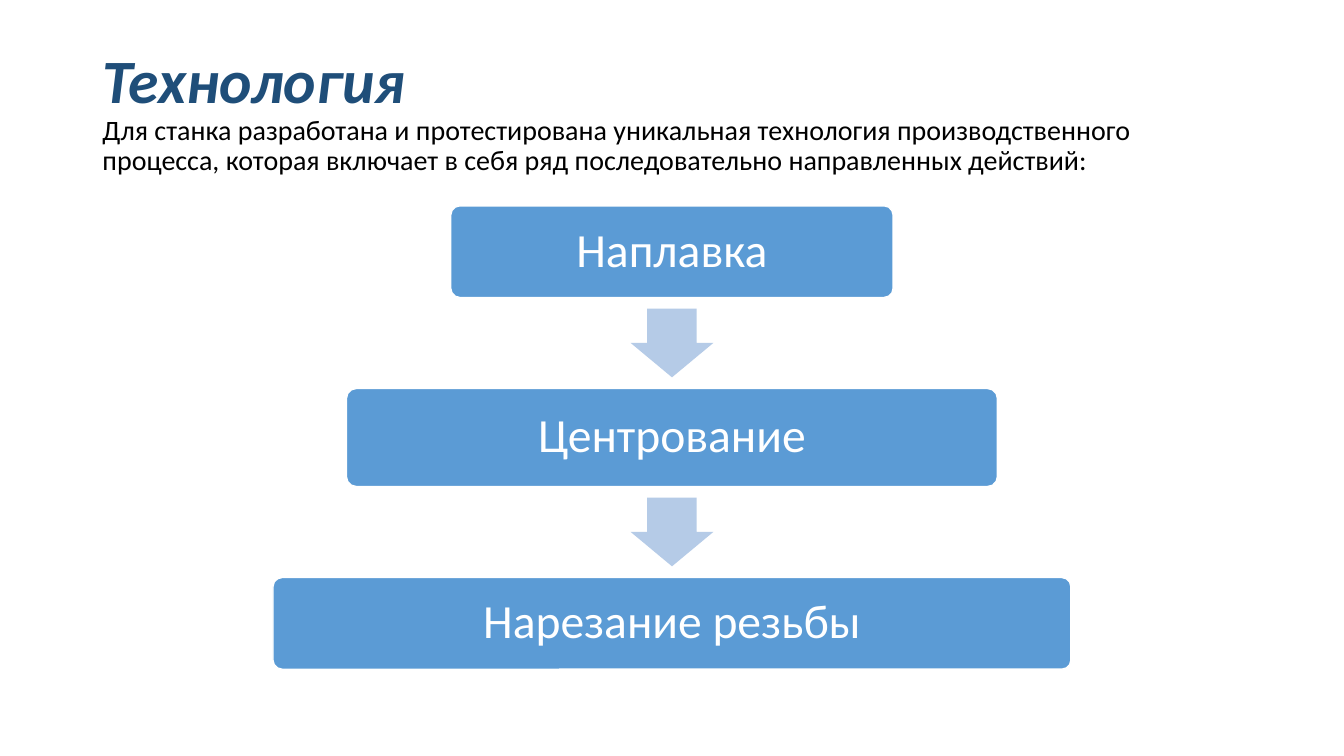
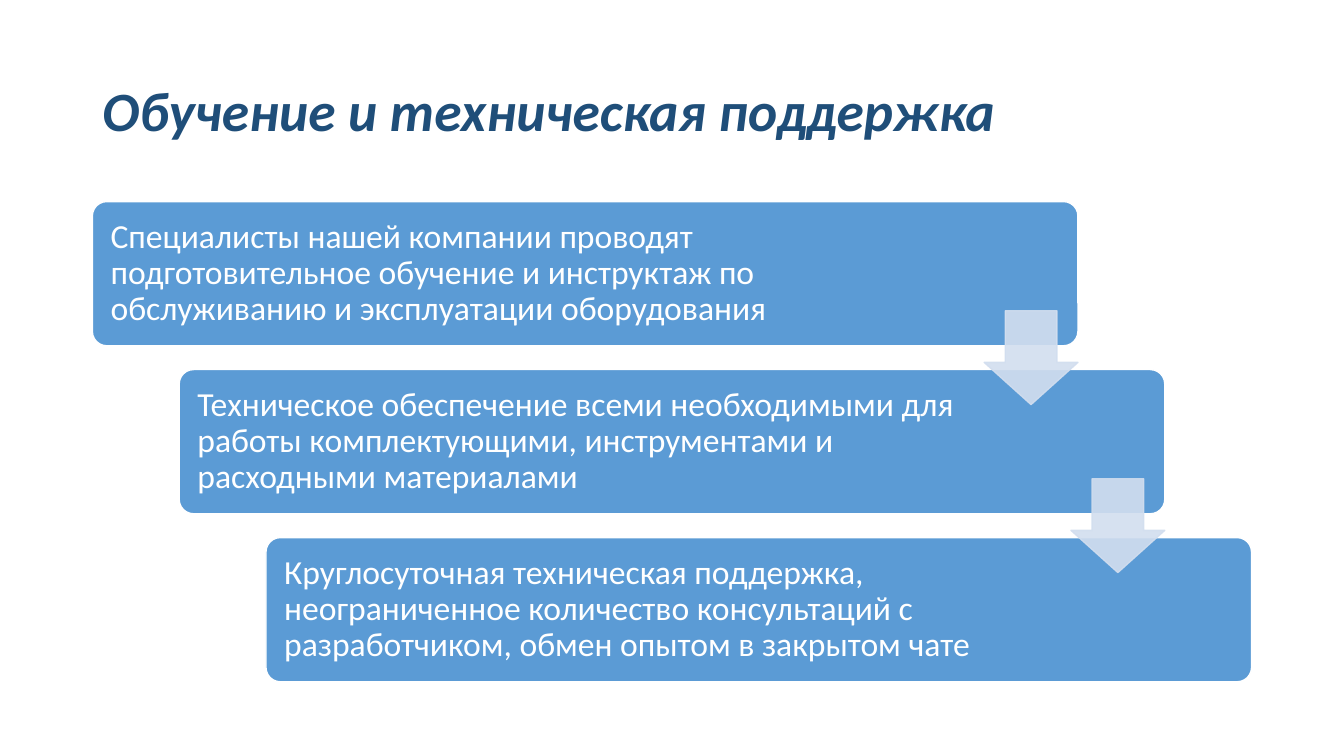
import pptx
import pptx.dml.color
import pptx.enum.shapes
import pptx.enum.text
import pptx.oxml
import pptx.oxml.ns
import pptx.util

Pt = pptx.util.Pt
Kind = pptx.enum.shapes.MSO_SHAPE
Align = pptx.enum.text.PP_ALIGN
Anchor = pptx.enum.text.MSO_ANCHOR

FONT = "Calibri"
HUES = {
    "title": "1F4E79",
    "text": "000000",
    "box": "5B9BD5",
    "white": "FFFFFF",
    "arrow": "B5CBE7",
    "pale": "D2DEEF",
}
WIDE, HIGH = 960, 540


class Deck:
    """Holds the shared style and the current slide."""

    def __init__(self):
        self.file = pptx.Presentation()
        self.file.slide_width, self.file.slide_height = Pt(WIDE), Pt(HIGH)
        self.slide = None

    def hue(self, name):
        return pptx.dml.color.RGBColor.from_string(HUES[name])

    def style(self, para, size, hue, strong=False, align=Align.LEFT):
        para.alignment = align
        para.line_spacing = 0.9
        para.space_before = para.space_after = Pt(0)
        for run in para.runs:
            font = run.font
            font.name, font.size = FONT, Pt(size)
            font.bold = font.italic = strong
            font.color.rgb = self.hue(hue)

    def page(self, title, size, lead=None):
        """Start a slide with a title and, if given, a lead line below it."""
        self.slide = self.file.slides.add_slide(self.file.slide_layouts[5])
        head = self.slide.shapes.title
        head.left, head.top, head.width, head.height = Pt(66), Pt(29), Pt(828), Pt(104)
        frame = head.text_frame
        frame.text = title
        frame.word_wrap = True
        frame.auto_size = pptx.enum.text.MSO_AUTO_SIZE.NONE
        frame.vertical_anchor = Anchor.MIDDLE
        self.style(frame.paragraphs[0], size, "title", strong=True)
        if lead:
            para = frame.add_paragraph()
            para.text = lead
            self.style(para, 20, "text")

    def shape(self, kind, x, y, w, h, fill, line, sides):
        item = self.slide.shapes.add_shape(kind, Pt(x), Pt(y), Pt(w), Pt(h))
        item.shadow.inherit = False
        item.fill.solid()
        item.fill.fore_color.rgb = self.hue(fill)
        if line:
            item.line.color.rgb = self.hue(line)
            item.line.width = Pt(1)
        else:
            item.line.fill.background()
        for spot, ratio in enumerate(sides):
            item.adjustments[spot] = ratio
        return item

    def box(self, x, y, w, h, text, size, align=Align.LEFT, right=10):
        item = self.shape(Kind.ROUNDED_RECTANGLE, x, y, w, h, "box", "white", [0.1])
        frame = item.text_frame
        frame.text = text
        frame.word_wrap = True
        frame.vertical_anchor = Anchor.MIDDLE
        frame.margin_left, frame.margin_right = Pt(10), Pt(right)
        frame.margin_top = frame.margin_bottom = Pt(10)
        self.style(frame.paragraphs[0], size, "white", align=align)

    def arrow(self, x, y, w, h, fill, sides, line=None, alpha=None):
        item = self.shape(Kind.DOWN_ARROW, x, y, w, h, fill, line, sides)
        if alpha:
            qn = pptx.oxml.ns.qn
            props = item.fill.fore_color, item.line.color
            for tint in item.element.spPr.iter(qn("a:srgbClr")):
                mark = pptx.oxml.parse_xml(
                    f'<a:alpha {pptx.oxml.ns.nsdecls("a")} val="{alpha * 1000}"/>')
                tint.append(mark)


def main():
    deck = Deck()

    # Steps of the process, stacked around the middle of the slide
    deck.page("Технология", 44,
              "Для станка разработана и протестирована уникальная технология "
              "производственного процесса, которая включает в себя ряд "
              "последовательно направленных действий:")
    steps = [("Наплавка", 316, 65.5), ("Центрование", 465, 70),
             ("Нарезание резьбы", 570, 65.5)]
    gap, wide, high = 8, 59, 49
    y = 147
    for spot, (text, w, h) in enumerate(steps):
        if spot:
            deck.arrow((WIDE - wide) / 2, y + gap, wide, high, "arrow", [0.6, 0.5])
            y += high + 2 * gap
        deck.box((WIDE - w) / 2, y, w, h, text, 34, Align.CENTER)
        y += h

    # Kinds of support, as a staircase
    deck.page("Обучение и техническая поддержка", 39.6)
    offers = [
        "Специалисты нашей компании проводят подготовительное обучение и "
        "инструктаж по обслуживанию и эксплуатации оборудования",
        "Техническое обеспечение всеми необходимыми для работы "
        "комплектующими, инструментами и расходными материалами",
        "Круглосуточная техническая поддержка, неограниченное количество "
        "консультаций с разработчиком, обмен опытом в закрытом чате",
    ]
    left, top, across, down = 66, 144, 62, 120
    for spot, text in enumerate(offers):
        deck.box(left + spot * across, top + spot * down, 704, 103, text, 24, right=140)
    # Arrows lie over the boxes they join
    for spot in range(len(offers) - 1):
        deck.arrow(left + 637 + spot * across, top + 78 + spot * down, 67, 67,
                   "pale", [0.55, 0.45], line="pale", alpha=90)

    deck.file.save("out.pptx")


if __name__ == "__main__":
    main()
